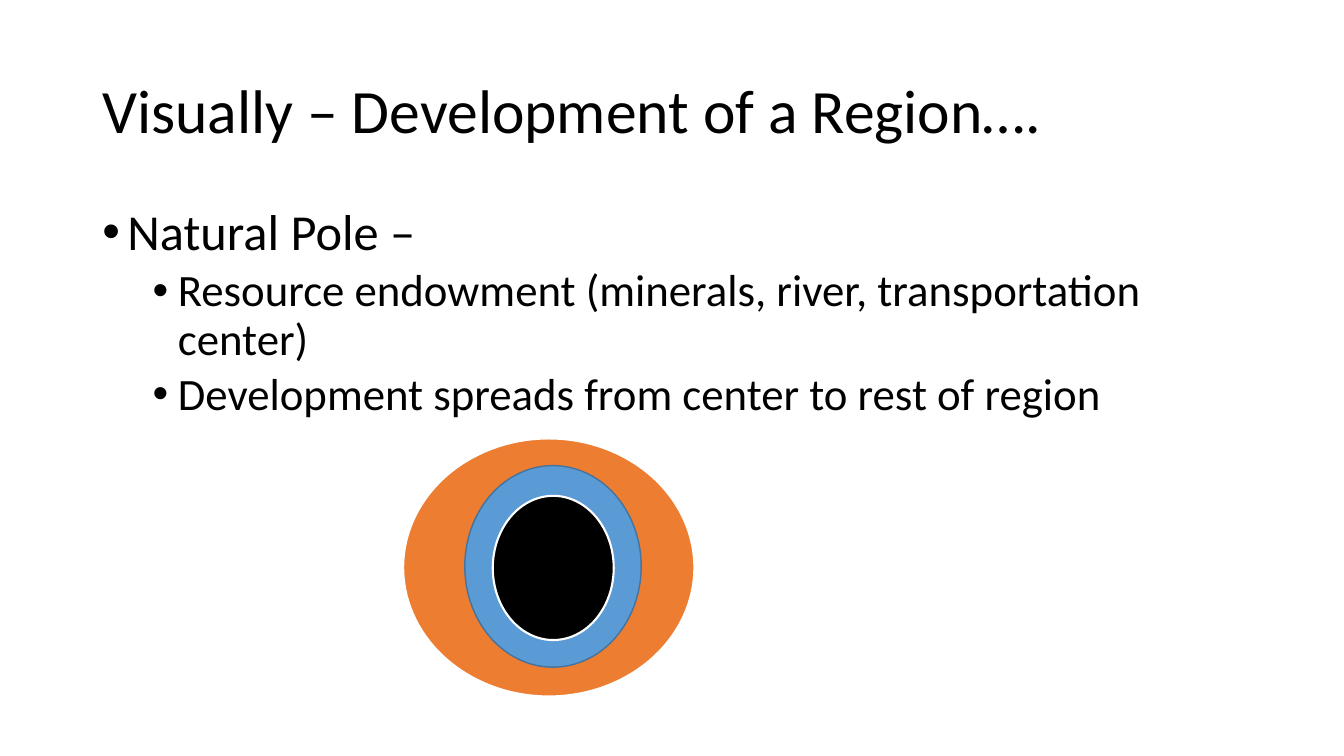
from dataclasses import dataclass

from lxml.etree import SubElement
from pptx import Presentation
from pptx.dml.color import RGBColor
from pptx.enum.shapes import MSO_SHAPE
from pptx.enum.text import MSO_ANCHOR, MSO_AUTO_SIZE, PP_ALIGN
from pptx.oxml.ns import qn
from pptx.util import Pt


@dataclass(frozen=True)
class Theme:
    """Colours, font and type sizes of the slide."""
    font: str = "Calibri"
    ink: str = "000000"
    paper: str = "FFFFFF"
    region: str = "ED7D31"
    spread: str = "5B9BD5"
    spread_edge: str = "43739E"
    title_size: int = 44
    level_sizes: tuple = (36, 32)
    level_gaps: tuple = (10, 5)
    line_spacing: float = 0.9


THEME = Theme()


def style_paragraph(paragraph, size):
    """Apply the theme's type and line spacing to a paragraph."""
    paragraph.alignment = PP_ALIGN.LEFT
    paragraph.line_spacing = THEME.line_spacing
    for run in paragraph.runs:
        run.font.name = THEME.font
        run.font.size = Pt(size)
        run.font.color.rgb = RGBColor.from_string(THEME.ink)


def add_bullet(paragraph, level):
    """Give a paragraph a round bullet and the hanging indent of its level."""
    properties = paragraph._p.get_or_add_pPr()
    properties.set("marL", str(Pt(18 + 36 * level)))
    properties.set("indent", str(Pt(-18)))
    SubElement(properties, qn("a:buFont"), typeface="Arial")
    SubElement(properties, qn("a:buChar"), char="•")


def place_title(slide, left, top, width, height):
    """Fill and place the slide title."""
    title = slide.shapes.title
    title.left, title.top, title.width, title.height = map(Pt, (left, top, width, height))
    frame = title.text_frame
    frame.text = "Visually – Development of a Region…."
    frame.vertical_anchor = MSO_ANCHOR.MIDDLE
    frame.auto_size = MSO_AUTO_SIZE.NONE
    style_paragraph(frame.paragraphs[0], THEME.title_size)


def place_points(slide, left, top, width, height):
    """Write the natural pole and its two supporting points."""
    points = [
        (0, "Natural Pole –"),
        (1, "Resource endowment (minerals, river, transportation center)"),
        (1, "Development spreads from center to rest of region"),
    ]
    frame = slide.shapes.add_textbox(*map(Pt, (left, top, width, height))).text_frame
    frame.word_wrap = True
    frame.text = "\n".join(wording for _, wording in points)
    for paragraph, (level, _) in zip(frame.paragraphs, points):
        paragraph.level = level
        paragraph.space_before = Pt(THEME.level_gaps[level])
        style_paragraph(paragraph, THEME.level_sizes[level])
        add_bullet(paragraph, level)


def place_growth_rings(slide, left, top, width, height):
    """Draw the pole, its spread and the region as nested ellipses."""
    rings = [
        (0, 0, width, height, THEME.region, THEME.paper, 1.5),
        (44, 19.4, 126, 144, THEME.spread, THEME.spread_edge, 1),
        (64, 41, 86.4, 103, THEME.ink, THEME.paper, 1.5),
    ]
    for across, down, ring_width, ring_height, fill, edge, weight in rings:
        ring = slide.shapes.add_shape(
            MSO_SHAPE.OVAL, Pt(left + across), Pt(top + down), Pt(ring_width), Pt(ring_height))
        ring.shadow.inherit = False
        ring.fill.solid()
        ring.fill.fore_color.rgb = RGBColor.from_string(fill)
        ring.line.color.rgb = RGBColor.from_string(edge)
        ring.line.width = Pt(weight)


def main():
    """Build and save the slide."""
    deck = Presentation()
    deck.slide_width, deck.slide_height = Pt(960), Pt(540)
    slide = deck.slides.add_slide(deck.slide_layouts[5])
    slide.background.fill.solid()
    slide.background.fill.fore_color.rgb = RGBColor.from_string(THEME.paper)
    place_title(slide, 66, 28.8, 828, 104.4)
    place_points(slide, 66, 144, 828, 342.6)
    place_growth_rings(slide, 288, 313.2, 208, 184.3)
    deck.save("out.pptx")


if __name__ == "__main__":
    main()
